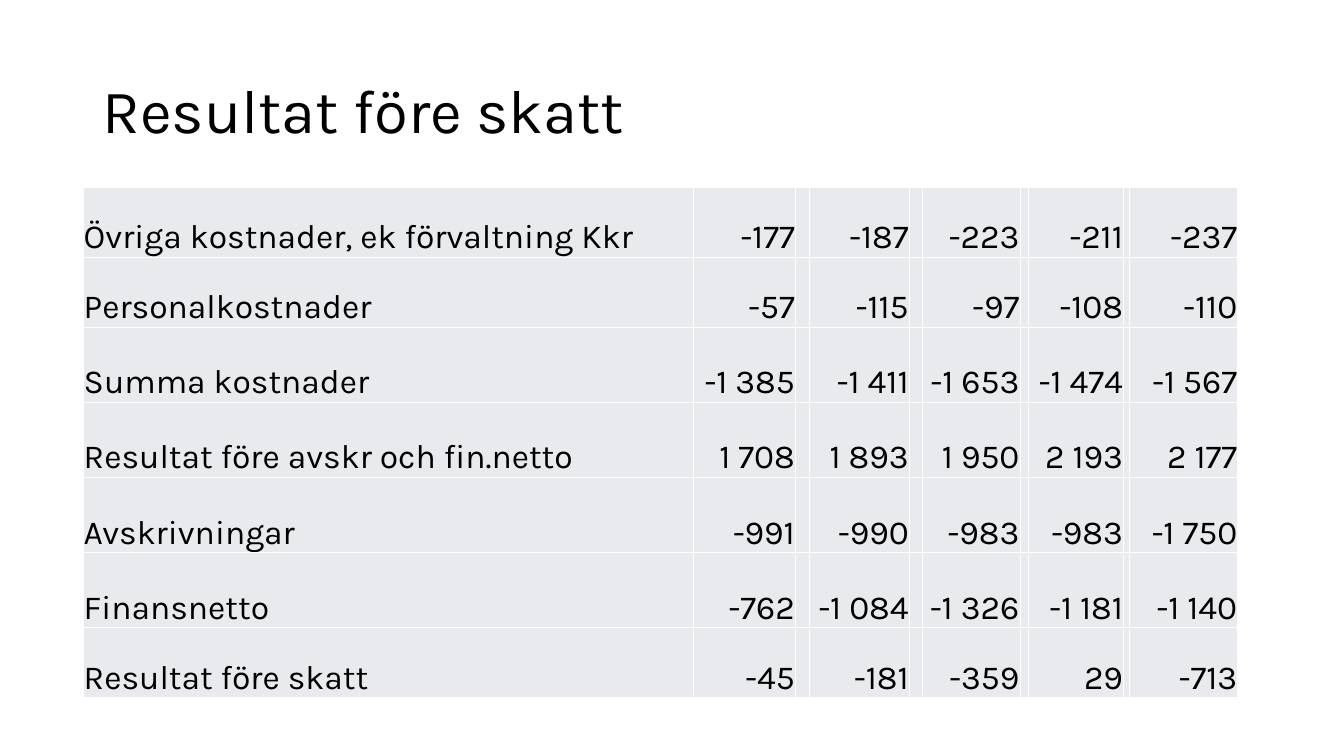
from pptx import Presentation
from pptx.dml.color import RGBColor
from pptx.enum.text import MSO_ANCHOR, PP_ALIGN
from pptx.util import Cm, Pt

TITLE = "Resultat före skatt"
ROWS = [
    ("Övriga kostnader, ek förvaltning Kkr", "-177", "-187", "-223", "-211", "-237"),
    ("Personalkostnader", "-57", "-115", "-97", "-108", "-110"),
    ("Summa kostnader", "-1 385", "-1 411", "-1 653", "-1 474", "-1 567"),
    ("Resultat före avskr och fin.netto", "1 708", "1 893", "1 950", "2 193", "2 177"),
    ("Avskrivningar", "-991", "-990", "-983", "-983", "-1 750"),
    ("Finansnetto", "-762", "-1 084", "-1 326", "-1 181", "-1 140"),
    ("Resultat före skatt", "-45", "-181", "-359", "29", "-713"),
]
COL_WIDTHS = [15.39, 2.57, 0.36, 2.51, 0.33, 2.46, 0.2, 2.41, 0.1, 2.74]
ROW_HEIGHTS = [1.77, 1.77, 1.89, 1.89, 1.89, 1.89, 1.77]
VALUE_COLS = [0, 1, 3, 5, 7, 9]

FONT = "Karla"
BLACK = RGBColor(0x00, 0x00, 0x00)
GREY = RGBColor(0xE8, 0xEA, 0xED)
LEFT, RIGHT = PP_ALIGN.LEFT, PP_ALIGN.RIGHT
MIDDLE, BOTTOM = MSO_ANCHOR.MIDDLE, MSO_ANCHOR.BOTTOM


def format_text(p, size, align):
    p.alignment = align
    for r in p.runs:
        r.font.name = FONT
        r.font.size = Pt(size)
        r.font.color.rgb = BLACK


def add_title(slide):
    sp = slide.shapes.title
    sp.left, sp.top, sp.width, sp.height = Cm(2.33), Cm(1.01), Cm(29.21), Cm(3.68)
    tf = sp.text_frame
    tf.text = TITLE
    tf.vertical_anchor = MIDDLE
    p = tf.paragraphs[0]
    p.line_spacing = 0.9
    format_text(p, 44, LEFT)


def add_result_table(slide):
    frame = slide.shapes.add_table(
        len(ROWS), len(COL_WIDTHS), Cm(2.09), Cm(4.71),
        Cm(sum(COL_WIDTHS)), Cm(sum(ROW_HEIGHTS)))
    table = frame.table
    table.first_row = False
    table.horz_banding = False
    for col, width in zip(table.columns, COL_WIDTHS):
        col.width = Cm(width)
    for row, height in zip(table.rows, ROW_HEIGHTS):
        row.height = Cm(height)
    for cell in table.iter_cells():
        cell.fill.solid()
        cell.fill.fore_color.rgb = GREY
        cell.vertical_anchor = BOTTOM
        cell.margin_left = cell.margin_right = cell.margin_top = Cm(0.02)
        cell.margin_bottom = 0
    for i, values in enumerate(ROWS):
        for j, value in zip(VALUE_COLS, values):
            tf = table.cell(i, j).text_frame
            tf.text = value
            format_text(tf.paragraphs[0], 24, RIGHT if j else LEFT)


def main():
    prs = Presentation()
    prs.slide_width, prs.slide_height = Cm(33.87), Cm(19.05)
    slide = prs.slides.add_slide(prs.slide_layouts[5])
    add_title(slide)
    add_result_table(slide)
    prs.save("out.pptx")


if __name__ == "__main__":
    main()
